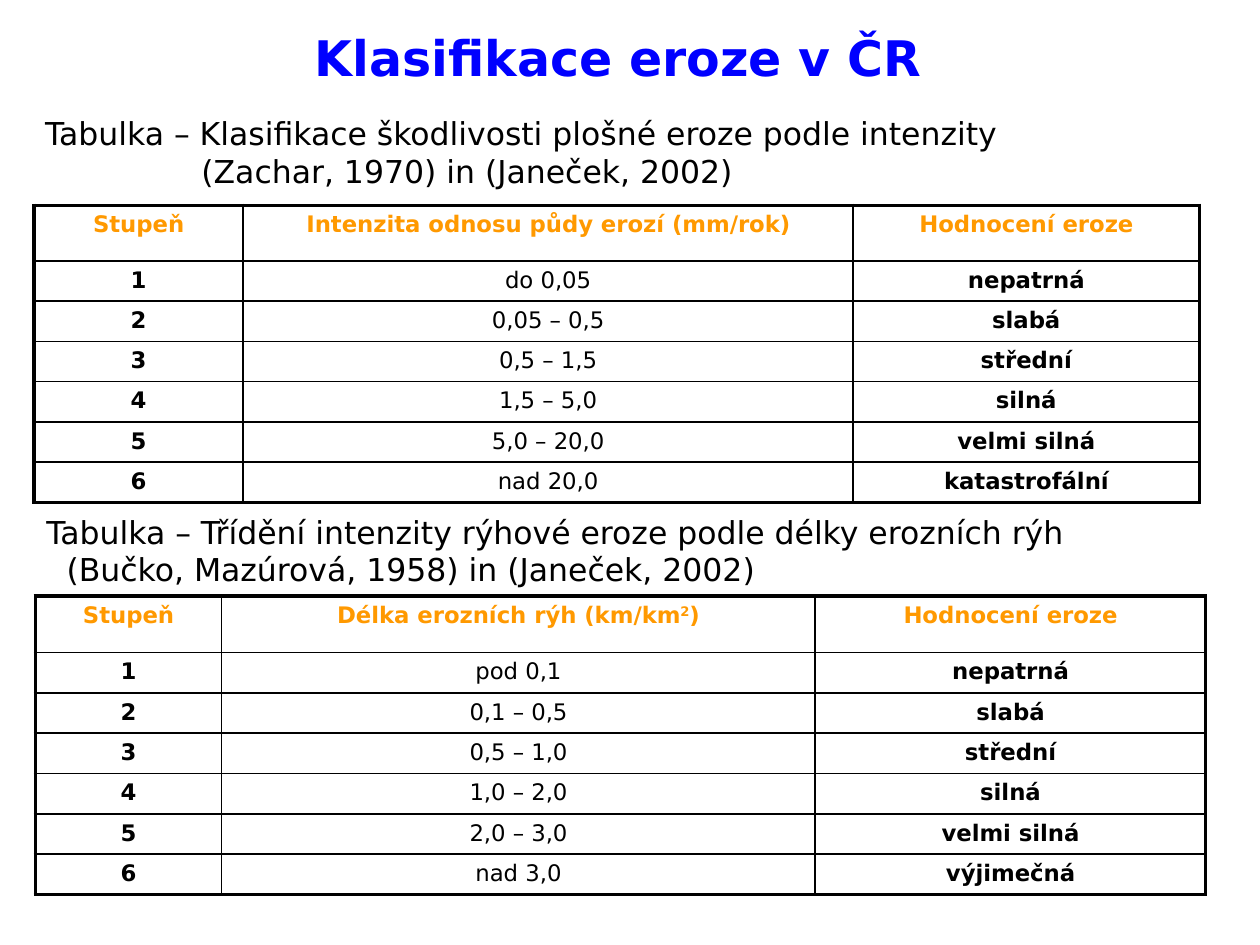
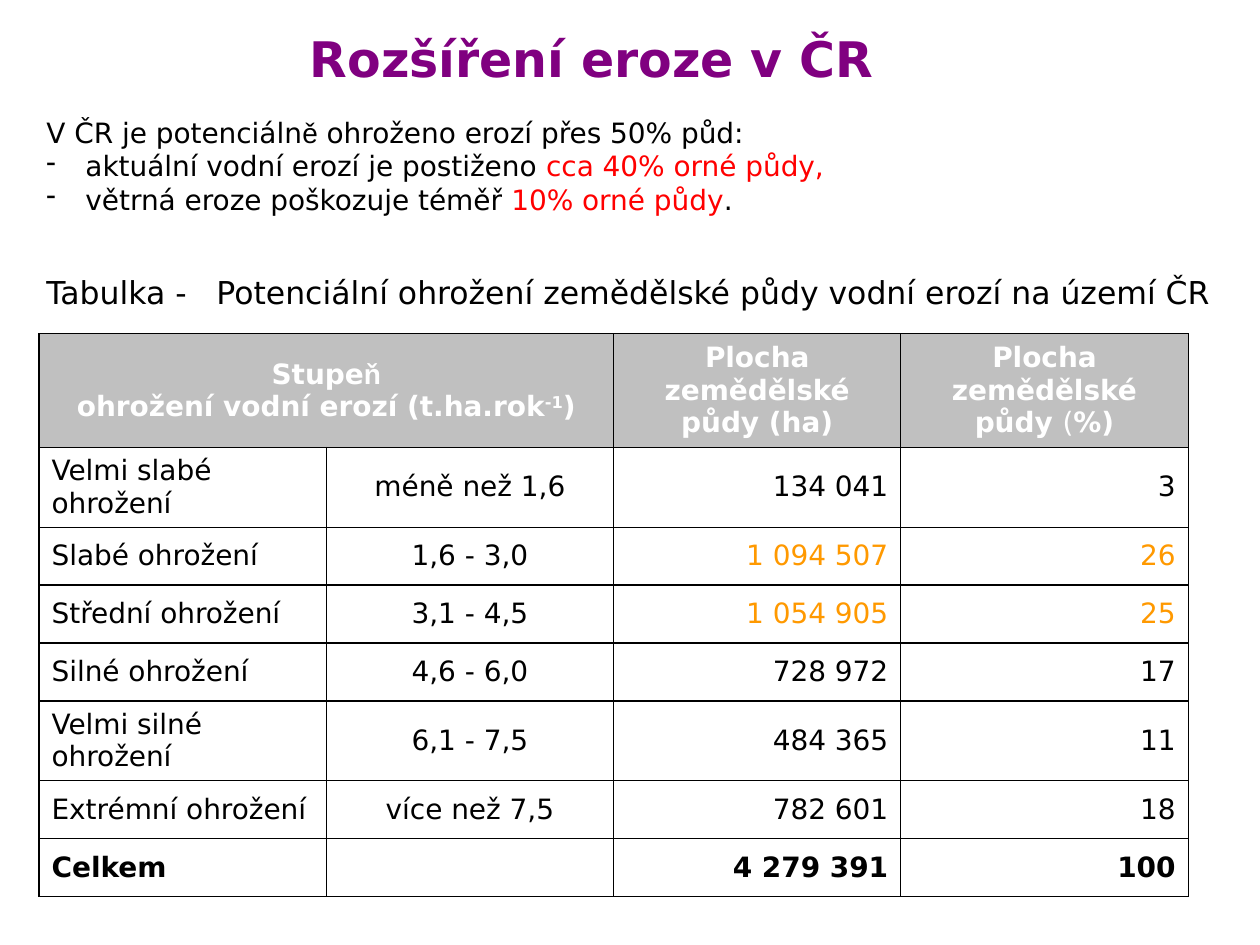
from pptx import Presentation
from pptx import util as u
from pptx.dml.color import RGBColor
from pptx.enum import text
from pptx.oxml.ns import qn
from lxml import etree

COLORS = {
    "black": "000000", "white": "FFFFFF", "blue": "0000FF", "purple": "800080",
    "orange": "FF9900", "red": "FF0000", "gray": "C0C0C0",
}
FONT = "DejaVu Sans"
LEFT, CENTER = text.PP_ALIGN.LEFT, text.PP_ALIGN.CENTER
RIGHT, JUSTIFY = text.PP_ALIGN.RIGHT, text.PP_ALIGN.JUSTIFY
TOP, MIDDLE = text.MSO_ANCHOR.TOP, text.MSO_ANCHOR.MIDDLE
RAISED = {"baseline": 30}
ARIAL = {"name": "Arial"}
HIGHLIGHT = {"color": "red"}

EROSION_GRADES = ["nepatrná", "slabá", "střední", "silná", "velmi silná"]
SHEET_EROSION = {
    "head": ["Stupeň", "Intenzita odnosu půdy erozí (mm/rok)", "Hodnocení eroze"],
    "ranges": ["do 0,05", "0,05 – 0,5", "0,5 – 1,5", "1,5 – 5,0", "5,0 – 20,0", "nad 20,0"],
    "grades": EROSION_GRADES + ["katastrofální"],
}
RILL_EROSION = {
    "head": ["Stupeň", [("Délka erozních rýh (km/km", {}), ("2", RAISED), (")", {})],
             "Hodnocení eroze"],
    "ranges": ["pod 0,1", "0,1 – 0,5", "0,5 – 1,0", "1,0 – 2,0", "2,0 – 3,0", "nad 3,0"],
    "grades": EROSION_GRADES + ["výjimečná"],
}
THREAT_HEAD = [
    [("Stupe", {}), ("ň", ARIAL), ("\vohrožení vodní erozí (t.ha.rok", {}),
     ("-1", RAISED), (")", {})],
    "",
    "Plocha zemědělské půdy (ha)",
    [("Plocha zemědělské půdy ", {}), ("(", {"bold": False}), ("%)", {})],
]
THREAT_ROWS = [
    ["Velmi slabé ohrožení", "méně než 1,6", "134 041", "3"],
    ["Slabé ohrožení", "1,6 - 3,0", "1 094 507", "26"],
    ["Střední ohrožení", "3,1 - 4,5", "1 054 905", "25"],
    ["Silné ohrožení", "4,6 - 6,0", "728 972", "17"],
    ["Velmi silné ohrožení", "6,1 - 7,5", "484 365", "11"],
    ["Extrémní ohrožení", "více než 7,5", "782 601", "18"],
    ["Celkem", "", "4 279 391", "100"],
]


class SlideBuilder:
    """Holds the deck, its text style and the slide being filled."""

    def __init__(self):
        self.deck = Presentation()
        self.deck.slide_width, self.deck.slide_height = u.Inches(10), u.Inches(7.5)
        self.slide = None

    def new_slide(self):
        self.slide = self.deck.slides.add_slide(self.deck.slide_layouts[6])

    def add_spans(self, para, content, **style):
        """Fill a paragraph from a string or a list of (text, format) spans."""
        spans = [(content, {})] if isinstance(content, str) else content
        for words, changes in spans:
            values = {"name": FONT, "bold": False, "color": "black", **style, **changes}
            values["size"] = u.Pt(values["size"])
            color = values.pop("color")
            baseline = values.pop("baseline", 0)
            for number, line in enumerate(words.split("\v")):
                if number:
                    para.add_line_break()
                if not line:
                    continue
                span = para.add_run()
                span.text = line
                for key, value in values.items():
                    setattr(span.font, key, value)
                span.font.color.rgb = RGBColor.from_string(COLORS[color])
                if baseline:
                    span._r.get_or_add_rPr().set("baseline", str(baseline * 1000))

    def text_box(self, area, wrap=True, anchor=TOP):
        box = self.slide.shapes.add_textbox(*map(u.Inches, area))
        box.text_frame.word_wrap = wrap
        box.text_frame.vertical_anchor = anchor
        return box.text_frame

    def title(self, words, area, color):
        frame = self.text_box(area)
        self.add_spans(frame.paragraphs[0], words, size=28, bold=True, color=color)

    def caption(self, words, area, hang=0, tab=0, wrap=True):
        para = self.text_box(area, wrap).paragraphs[0]
        if hang:
            self.hang(para, hang)
        if tab:
            tabs = etree.SubElement(para._p.get_or_add_pPr(), qn("a:tabLst"))
            etree.SubElement(tabs, qn("a:tab"), pos=str(u.Inches(tab)), algn="l")
        self.add_spans(para, words, size=18)

    def hang(self, para, indent):
        props = para._p.get_or_add_pPr()
        props.set("marL", str(u.Inches(indent)))
        props.set("indent", str(-u.Inches(indent)))
        return props

    def bullet_list(self, intro, items, area):
        frame = self.text_box(area, anchor=MIDDLE)
        for number, content in enumerate([intro] + items):
            para = frame.add_paragraph() if number else frame.paragraphs[0]
            if number:
                props = self.hang(para, 0.31)
                etree.SubElement(props, qn("a:buChar"), char="-")
            para.alignment = JUSTIFY
            self.add_spans(para, content, size=16)

    def table(self, left, top, widths, heights):
        area = (left, top, sum(widths), sum(heights))
        frame = self.slide.shapes.add_table(
            len(heights), len(widths), *map(u.Inches, area))
        table = frame.table
        table.first_row = table.horz_banding = False
        for column, width in zip(table.columns, widths):
            column.width = u.Inches(width)
        for row, height in zip(table.rows, heights):
            row.height = u.Inches(height)
        return table

    def cell(self, cell, content, align, anchor, fill=None, **style):
        cell.vertical_anchor = anchor
        if fill:
            cell.fill.solid()
            cell.fill.fore_color.rgb = RGBColor.from_string(COLORS[fill])
        else:
            cell.fill.background()
        para = cell.text_frame.paragraphs[0]
        para.alignment = align
        self.add_spans(para, content, **style)

    def borders(self, table, outer, inner):
        last_row, last_column = len(table.rows) - 1, len(table.columns) - 1
        for r in range(last_row + 1):
            for c in range(last_column + 1):
                on_edge = {"L": c == 0, "R": c == last_column,
                           "T": r == 0, "B": r == last_row}
                props = table.cell(r, c)._tc.get_or_add_tcPr()
                for place, (side, edge) in enumerate(on_edge.items()):
                    line = etree.Element(qn(f"a:ln{side}"),
                                         w=str(u.Pt(outer if edge else inner)))
                    fill = etree.SubElement(line, qn("a:solidFill"))
                    etree.SubElement(fill, qn("a:srgbClr"), val=COLORS["black"])
                    props.insert(place, line)

    def grade_table(self, data, left, top, widths, head_height, row_height):
        rows = [data["head"]]
        for number, pair in enumerate(zip(data["ranges"], data["grades"]), 1):
            rows.append([str(number), *pair])
        heights = [head_height] + [row_height] * len(data["ranges"])
        table = self.table(left, top, widths, heights)
        for r, row in enumerate(rows):
            for c, content in enumerate(row):
                self.cell(table.cell(r, c), content, CENTER, TOP, size=13,
                          bold=r == 0 or c != 1, color="black" if r else "orange")
        self.borders(table, 2.25, 1)

    def threat_table(self, left, top):
        heights = [0.9] + [0.63 if row[0].startswith("Velmi") else 0.46
                           for row in THREAT_ROWS]
        table = self.table(left, top, [2.28] * 4, heights)
        for c, content in enumerate(THREAT_HEAD):
            self.cell(table.cell(0, c), content, CENTER, MIDDLE, "gray",
                      size=16, bold=True, color="white")
        for r, row in enumerate(THREAT_ROWS, 1):
            for c, content in enumerate(row):
                stressed = r in (2, 3) and c >= 2
                self.cell(table.cell(r, c), content, (LEFT, CENTER, RIGHT, RIGHT)[c],
                          MIDDLE, size=16, bold=r == len(THREAT_ROWS),
                          color="orange" if stressed else "black")
        self.borders(table, 0.75, 0.75)
        table.cell(0, 0).merge(table.cell(0, 1))


def classification_slide(builder):
    builder.new_slide()
    builder.caption("Tabulka – Klasifikace škodlivosti plošné eroze podle intenzity"
                    "\v(Zachar, 1970) in (Janeček, 2002)",
                    (0.26, 0.86, 8.81, 0.7), hang=1.24)
    builder.grade_table(SHEET_EROSION, 0.27, 1.63, [1.66, 4.84, 2.75], 0.44, 0.32)
    builder.caption("Tabulka – Třídění intenzity rýhové eroze podle délky erozních rýh"
                    "\v(Bučko, Mazúrová, 1958) in (Janeček, 2002)",
                    (0.27, 4.02, 9.73, 0.7), hang=0.16)
    builder.grade_table(RILL_EROSION, 0.28, 4.73, [1.48, 4.71, 3.1], 0.45, 0.32)
    builder.title("Klasifikace eroze v ČR", (2.4, 0.17, 5.14, 0.57), "blue")


def extent_slide(builder):
    builder.new_slide()
    builder.bullet_list(
        [("V ČR je potenciáln", {}), ("ě", ARIAL), (" ohroženo erozí přes 50% půd:", {})],
        [[("aktuální vodní erozí je postiženo ", {}), ("cca 40% orné půdy,", HIGHLIGHT)],
         [("větrná eroze poškozuje téměř ", {}), ("10% orné půdy", HIGHLIGHT), (".", {})]],
        (0.27, 0.86, 9.73, 0.91))
    builder.threat_table(0.31, 2.65)
    builder.caption("Tabulka -\tPotenciální ohrožení zemědělské půdy vodní erozí na území ČR",
                    (0.27, 2.12, 9.67, 0.4), tab=1.35, wrap=False)
    builder.title("Rozšíření eroze v ČR", (2.36, 0.18, 5.22, 0.57), "purple")


def main():
    builder = SlideBuilder()
    classification_slide(builder)
    extent_slide(builder)
    builder.deck.save("out.pptx")


if __name__ == "__main__":
    main()
